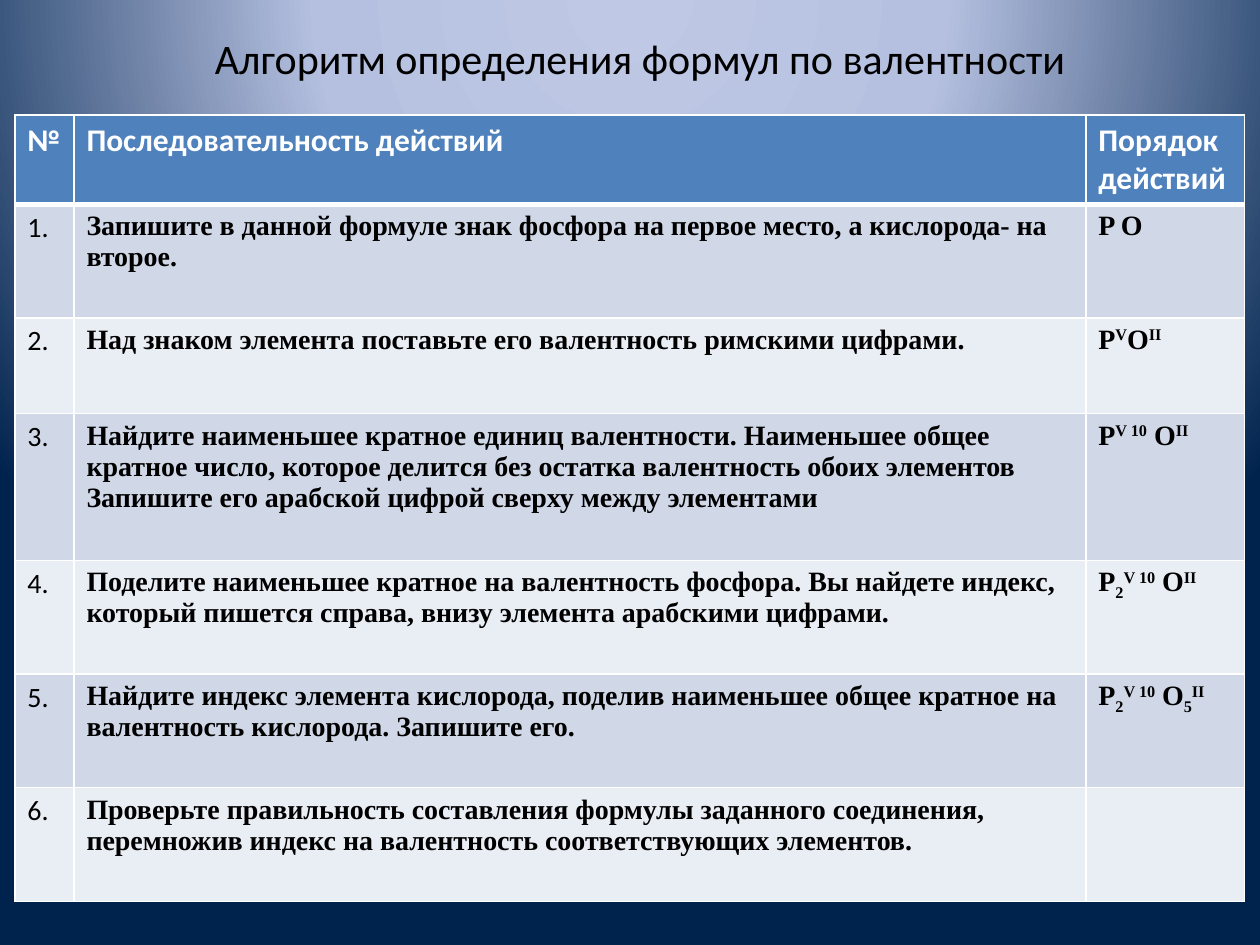
from dataclasses import dataclass

from lxml.etree import SubElement
from pptx import Presentation
from pptx.dml.color import RGBColor
from pptx.enum.text import MSO_AUTO_SIZE as AutoSize, PP_ALIGN as Align
from pptx.oxml import parse_xml
from pptx.oxml.ns import nsdecls, qn
from pptx.util import Cm, Pt

BLACK = RGBColor(0x00, 0x00, 0x00)
WHITE = RGBColor(0xFF, 0xFF, 0xFF)
HEADER_BLUE = RGBColor(0x4F, 0x81, 0xBD)
BAND_DARK = RGBColor(0xD0, 0xD8, 0xE8)
BAND_LIGHT = RGBColor(0xE9, 0xED, 0xF4)
BACKGROUND_STOPS = (
    (0, RGBColor(0xBF, 0xC9, 0xE5)),
    (40, RGBColor(0xB5, 0xC0, 0xE0)),
    (100, RGBColor(0x00, 0x23, 0x4D)),
)
SUPERSCRIPT, SUBSCRIPT = 30, -25


@dataclass(frozen=True)
class Style:
    font: str
    size: int
    color: RGBColor = BLACK
    bold: bool = False


@dataclass(frozen=True)
class Piece:
    text: str
    baseline: int = 0


@dataclass(frozen=True)
class Step:
    height: float
    lines: tuple[str, ...]
    formula: tuple[Piece, ...] = ()


TITLE = Style("Calibri", 24)
HEADER = Style("Calibri", 18, WHITE, True)
NUMBER = Style("Calibri", 16)
BODY = Style("Times New Roman", 16, BLACK, True)

# Parts of the formulas
P = Piece("P")
O = Piece("O")
SPACED_O = Piece(" O")
V = Piece("V", SUPERSCRIPT)
V_10 = Piece("V 10", SUPERSCRIPT)
II = Piece("II", SUPERSCRIPT)
INDEX_2 = Piece("2", SUBSCRIPT)
INDEX_5 = Piece("5", SUBSCRIPT)

COLUMN_WIDTHS = (1.19, 20.4, 3.2)
HEADER_HEIGHT = 1.8
HEADINGS = ("№", "Последовательность действий", "Порядок действий")
STEPS = (
    Step(2.29, ("Запишите в данной формуле знак фосфора на первое место, "
                "а кислорода- на второе.",), (Piece("P O"),)),
    Step(1.93, ("Над знаком элемента поставьте его валентность римскими цифрами.",),
         (P, V, O, II)),
    Step(2.96, ("Найдите наименьшее кратное единиц валентности. Наименьшее общее кратное "
                "число, которое делится без остатка валентность обоих элементов",
                "Запишите его арабской цифрой сверху между элементами"),
         (P, V_10, SPACED_O, II)),
    Step(2.29, ("Поделите наименьшее кратное на валентность фосфора. Вы найдете индекс, "
                "который пишется справа, внизу элемента арабскими цифрами.",),
         (P, INDEX_2, V_10, SPACED_O, II)),
    Step(2.29, ("Найдите индекс элемента кислорода, поделив наименьшее общее кратное "
                "на валентность кислорода. Запишите его.",),
         (P, INDEX_2, V_10, SPACED_O, INDEX_5, II)),
    Step(2.29, ("Проверьте правильность составления формулы заданного соединения, "
                "перемножив индекс на валентность соответствующих элементов.",)),
)


def add_run(paragraph, piece: Piece, style: Style) -> None:
    run = paragraph.add_run()
    run.text = piece.text
    run.font.name = style.font
    run.font.size = Pt(style.size)
    run.font.bold = style.bold
    run.font.color.rgb = style.color
    if piece.baseline:
        run._r.get_or_add_rPr().set("baseline", str(piece.baseline * 1000))


def write(text_frame, paragraphs, style: Style) -> None:
    for index, pieces in enumerate(paragraphs):
        paragraph = text_frame.add_paragraph() if index else text_frame.paragraphs[0]
        for piece in pieces:
            add_run(paragraph, piece, style)


def set_borders(cell, bottom: int = 1, top: int = 1) -> None:
    properties = cell._tc.get_or_add_tcPr()
    sides = (("L", 1), ("R", 1), ("T", top), ("B", bottom))
    for position, (side, width) in enumerate(sides):
        line = parse_xml(f'<a:ln{side} {nsdecls("a")} w="{Pt(width)}"/>')
        fill = SubElement(line, qn("a:solidFill"))
        SubElement(fill, qn("a:srgbClr"), val=str(WHITE))
        properties.insert(position, line)


def fill_cell(cell, paragraphs, style: Style, color: RGBColor, **borders: int) -> None:
    cell.fill.solid()
    cell.fill.fore_color.rgb = color
    set_borders(cell, **borders)
    write(cell.text_frame, paragraphs, style)


def set_background(slide) -> None:
    slide.background.fill.gradient()
    gradient = slide.element.find(".//" + qn("a:gradFill"))
    for child in list(gradient):
        gradient.remove(child)
    stops = SubElement(gradient, qn("a:gsLst"))
    for position, color in BACKGROUND_STOPS:
        stop = SubElement(stops, qn("a:gs"), pos=str(position * 1000))
        SubElement(stop, qn("a:srgbClr"), val=str(color))
    shade = SubElement(gradient, qn("a:path"), path="circle")
    SubElement(shade, qn("a:fillToRect"), l="50000", t="-80000", r="50000", b="180000")


def add_title(slide) -> None:
    text_frame = slide.shapes.add_textbox(Cm(1.7), Cm(0.53), Cm(22.6), Cm(1.27)).text_frame
    text_frame.word_wrap = True
    text_frame.auto_size = AutoSize.SHAPE_TO_FIT_TEXT
    write(text_frame, [[Piece("Алгоритм определения формул по валентности ")]], TITLE)
    text_frame.paragraphs[0].alignment = Align.CENTER


def add_steps_table(slide) -> None:
    heights = [HEADER_HEIGHT] + [step.height for step in STEPS]
    table = slide.shapes.add_table(
        len(heights), len(COLUMN_WIDTHS), Cm(0.3), Cm(2.32),
        Cm(sum(COLUMN_WIDTHS)), Cm(sum(heights))).table
    for column, width in zip(table.columns, COLUMN_WIDTHS):
        column.width = Cm(width)
    for row, height in zip(table.rows, heights):
        row.height = Cm(height)

    # Header row
    for column, heading in enumerate(HEADINGS):
        fill_cell(table.cell(0, column), [[Piece(heading)]], HEADER, HEADER_BLUE, bottom=3)

    # Numbered steps in alternating bands
    for number, step in enumerate(STEPS, start=1):
        color = BAND_DARK if number % 2 else BAND_LIGHT
        contents = (
            ([[Piece(f"{number}.")]], NUMBER),
            ([[Piece(line)] for line in step.lines], BODY),
            ([step.formula], BODY),
        )
        for column, (paragraphs, style) in enumerate(contents):
            fill_cell(table.cell(number, column), paragraphs, style, color,
                      top=3 if number == 1 else 1)


def main() -> None:
    presentation = Presentation()
    presentation.slide_width, presentation.slide_height = Cm(25.4), Cm(19.05)
    slide = presentation.slides.add_slide(presentation.slide_layouts[6])
    set_background(slide)
    add_title(slide)
    add_steps_table(slide)
    presentation.save("out.pptx")


if __name__ == "__main__":
    main()
